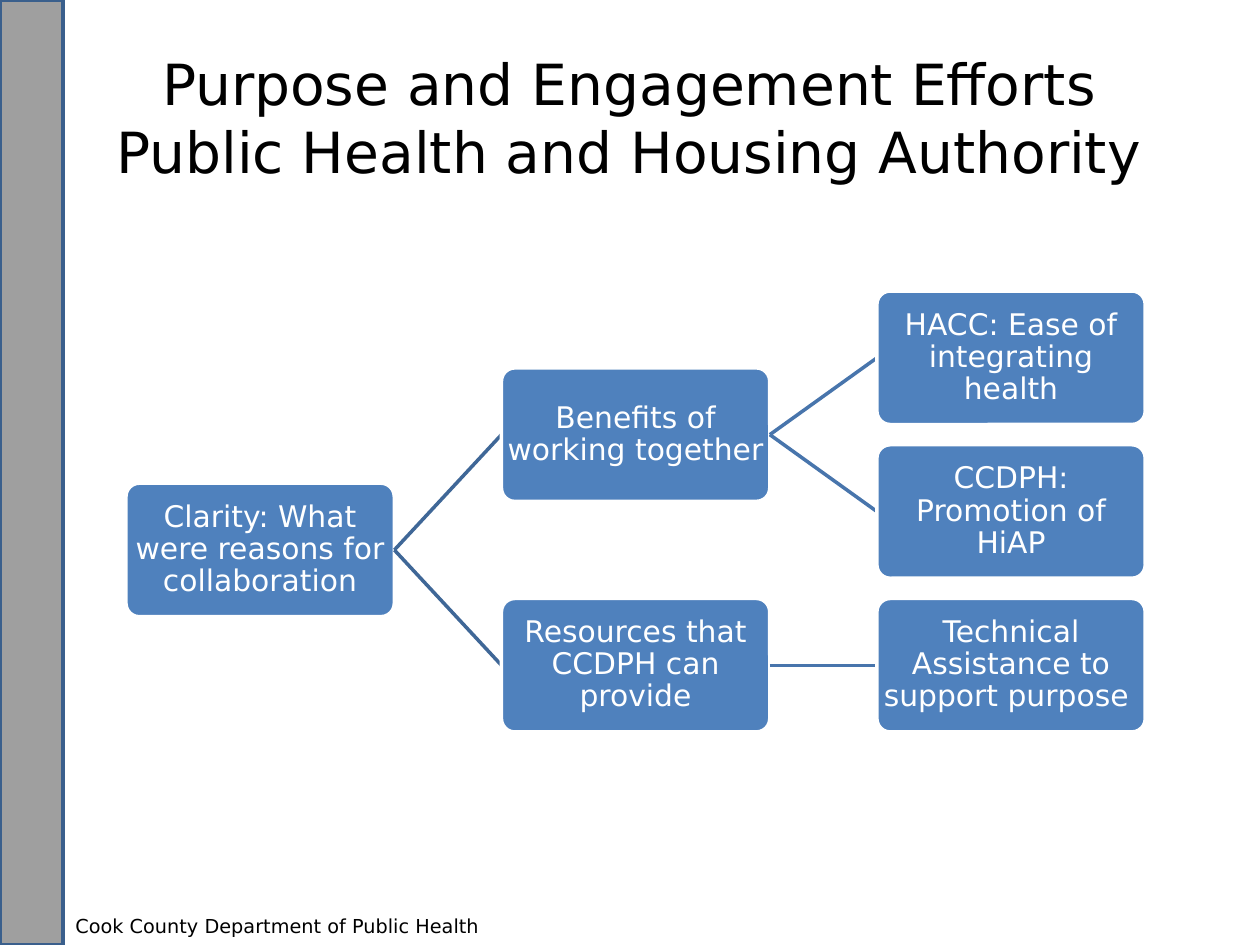
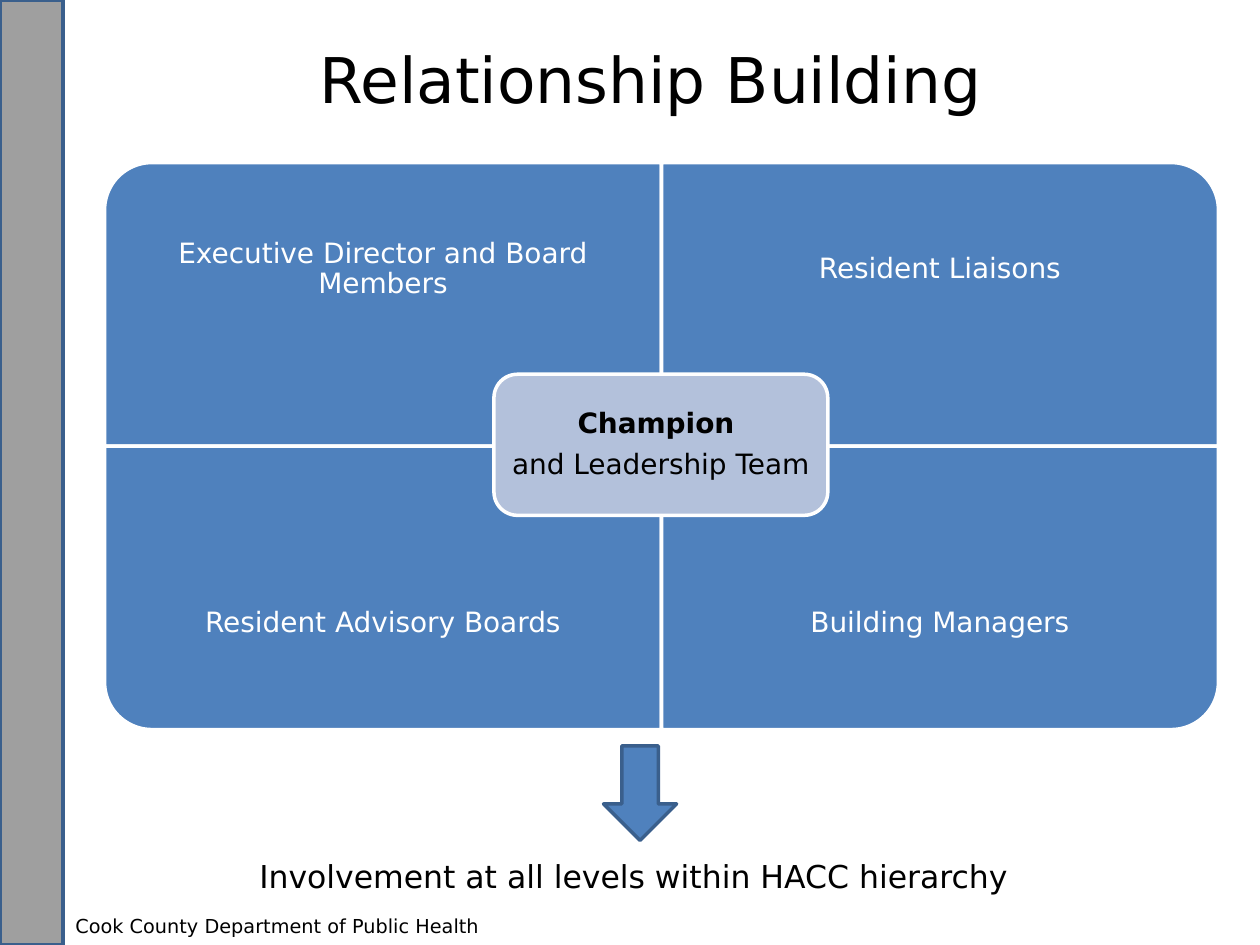
from dataclasses import dataclass

from lxml import etree
from pptx import Presentation
from pptx.dml.color import RGBColor
from pptx.enum.shapes import MSO_CONNECTOR, MSO_SHAPE
from pptx.enum.text import MSO_ANCHOR, PP_ALIGN
from pptx.oxml.ns import qn
from pptx.util import Inches, Pt

RECT, ROUND_RECT = MSO_SHAPE.RECTANGLE, MSO_SHAPE.ROUNDED_RECTANGLE
ROUND_CORNER, DOWN_ARROW = MSO_SHAPE.ROUND_1_RECTANGLE, MSO_SHAPE.DOWN_ARROW
STRAIGHT = MSO_CONNECTOR.STRAIGHT
LEFT, CENTER = PP_ALIGN.LEFT, PP_ALIGN.CENTER
TOP, MIDDLE = MSO_ANCHOR.TOP, MSO_ANCHOR.MIDDLE


@dataclass(frozen=True)
class Theme:
    font: str = "DejaVu Sans"
    black: str = "000000"
    white: str = "FFFFFF"
    blue: str = "4F81BD"
    pale_blue: str = "B3C1DB"
    edge: str = "3A5F8C"
    band: str = "808080"
    band_opacity: int = 75
    links: tuple[str, ...] = ("3F6797", "4875AC")
    line_width: float = 2
    long_title_size: float = 32.4
    title_size: float = 36
    outcome_size: float = 18
    node_size: float = 17
    quadrant_size: float = 16
    footer_size: float = 11
    tight: float = 0.9
    paragraph_gap: float = 6


THEME = Theme()


@dataclass(frozen=True)
class Box:
    """A place on the slide, in inches."""
    left: float
    top: float
    width: float
    height: float

    def emu(self) -> tuple:
        return tuple(Inches(v) for v in (self.left, self.top, self.width, self.height))


@dataclass(frozen=True)
class Topic:
    text: str
    children: tuple["Topic", ...] = ()


@dataclass(frozen=True)
class Quadrant:
    text: str
    column: int
    row: int
    rotation: int


FOOTER = "Cook County Department of Public Health"
REASONS = Topic("Clarity: What were reasons for collaboration", (
    Topic("Benefits of working together", (
        Topic("HACC: Ease of integrating health"),
        Topic("CCDPH: Promotion of HiAP"),
    )),
    Topic("Resources that CCDPH can provide", (
        Topic("Technical Assistance to support purpose "),
    )),
))
QUADRANTS = (
    Quadrant("Executive Director and Board Members", 0, 0, 270),
    Quadrant("Resident Liaisons", 1, 0, 0),
    Quadrant("Resident Advisory Boards", 0, 1, 180),
    Quadrant("Building Managers", 1, 1, 90),
)

NODE_WIDTH, NODE_HEIGHT = 2.13, 1.06
TREE_LEFT, LEVEL_STEP = 1.0, 2.98
FIRST_LEAF_MIDDLE, LEAF_STEP = 2.84, 1.22
GRID_LEFT, GRID_TOP = 0.83, 1.29
QUADRANT_WIDTH, QUADRANT_HEIGHT, LABEL_HEIGHT = 4.42, 2.25, 1.69


def write(shape, text: str, *, size: float, color: str = THEME.black,
          align=CENTER, anchor=MIDDLE, inset: float | None = None,
          spacing: float | None = None, bold_first: bool = False) -> None:
    """Fill a shape with text, one paragraph for each line."""
    frame = shape.text_frame
    frame.word_wrap = True
    frame.vertical_anchor = anchor
    if inset is not None:
        frame.margin_left = frame.margin_right = Inches(inset)
        frame.margin_top = frame.margin_bottom = Inches(inset)
    frame.text = text
    for index, paragraph in enumerate(frame.paragraphs):
        paragraph.alignment = align
        if spacing:
            paragraph.line_spacing = spacing
            paragraph.space_after = Pt(THEME.paragraph_gap)
        for run in paragraph.runs:
            run.font.name = THEME.font
            run.font.size = Pt(size)
            run.font.bold = bold_first and index == 0
            run.font.color.rgb = RGBColor.from_string(color)


def add_text(slide, box: Box, text: str, **text_format) -> None:
    write(slide.shapes.add_textbox(*box.emu()), text, **text_format)


def add_block(slide, kind, box: Box, fill: str = THEME.blue, line: str = THEME.white):
    block = slide.shapes.add_shape(kind, *box.emu())
    block.shadow.inherit = False
    block.fill.solid()
    block.fill.fore_color.rgb = RGBColor.from_string(fill)
    block.line.color.rgb = RGBColor.from_string(line)
    block.line.width = Pt(THEME.line_width)
    return block


def add_link(slide, x1: float, y1: float, x2: float, y2: float, color: str) -> None:
    link = slide.shapes.add_connector(STRAIGHT, *(Inches(v) for v in (x1, y1, x2, y2)))
    link.line.color.rgb = RGBColor.from_string(color)
    link.line.width = Pt(THEME.line_width)
    etree.SubElement(link._element.spPr, qn("a:effectLst"))


def add_slide(deck, title: str, title_box: Box, title_size: float):
    """Start a slide with the side band, footer and title."""
    slide = deck.slides.add_slide(deck.slide_layouts[6])
    band = add_block(slide, RECT, Box(0, 0, 0.5, 7.5), THEME.band, THEME.edge)
    band_color = band._element.spPr.find(qn("a:solidFill"))[0]
    etree.SubElement(band_color, qn("a:alpha"), val=str(THEME.band_opacity * 1000))
    add_text(slide, Box(0.5, 7.21, 5.17, 0.29), FOOTER,
             size=THEME.footer_size, align=LEFT, anchor=TOP)
    add_text(slide, title_box, title, size=title_size)
    return slide


def leaf_count(topic: Topic) -> int:
    return sum(map(leaf_count, topic.children)) or 1


def topic_middle(topic: Topic, first_leaf: int) -> float:
    """Centre a topic between its first and last child."""
    if not topic.children:
        return FIRST_LEAF_MIDDLE + LEAF_STEP * first_leaf
    last = topic.children[-1]
    last_leaf = first_leaf + leaf_count(topic) - leaf_count(last)
    return (topic_middle(topic.children[0], first_leaf) + topic_middle(last, last_leaf)) / 2


def draw_topic(slide, topic: Topic, level: int = 0, first_leaf: int = 0) -> None:
    left = TREE_LEFT + LEVEL_STEP * level
    middle = topic_middle(topic, first_leaf)
    node = add_block(slide, ROUND_RECT,
                     Box(left, middle - NODE_HEIGHT / 2, NODE_WIDTH, NODE_HEIGHT))
    node.adjustments[0] = 0.1
    write(node, topic.text, size=THEME.node_size, color=THEME.white,
          inset=0.01, spacing=THEME.tight)
    for child in topic.children:
        add_link(slide, left + NODE_WIDTH, middle, left + LEVEL_STEP,
                 topic_middle(child, first_leaf), THEME.links[level])
        draw_topic(slide, child, level + 1, first_leaf)
        first_leaf += leaf_count(child)


def draw_quadrant(slide, quadrant: Quadrant) -> None:
    left = GRID_LEFT + QUADRANT_WIDTH * quadrant.column
    top = GRID_TOP + QUADRANT_HEIGHT * quadrant.row
    width, height = QUADRANT_WIDTH, QUADRANT_HEIGHT
    if quadrant.rotation % 180:
        width, height = height, width
    panel = add_block(slide, ROUND_CORNER, Box(
        left + (QUADRANT_WIDTH - width) / 2, top + (QUADRANT_HEIGHT - height) / 2,
        width, height))
    panel.rotation = quadrant.rotation
    label_top = top + (QUADRANT_HEIGHT - LABEL_HEIGHT) * quadrant.row
    add_text(slide, Box(left, label_top, QUADRANT_WIDTH, LABEL_HEIGHT), quadrant.text,
             size=THEME.quadrant_size, color=THEME.white, inset=0.12, spacing=THEME.tight)


def build_purpose(deck) -> None:
    slide = add_slide(
        deck, "Purpose and Engagement Efforts\vPublic Health and Housing Authority",
        Box(0.58, 0.3, 8.83, 1.25), THEME.long_title_size)
    draw_topic(slide, REASONS)


def build_relationships(deck) -> None:
    slide = add_slide(deck, "Relationship Building",
                      Box(0.75, 0, 8.83, 1.25), THEME.title_size)
    for quadrant in QUADRANTS:
        draw_quadrant(slide, quadrant)
    champion = add_block(slide, ROUND_RECT, Box(3.92, 2.97, 2.65, 1.12), THEME.pale_blue)
    write(champion, "Champion \nand Leadership Team", size=THEME.quadrant_size,
          inset=0.07, spacing=THEME.tight, bold_first=True)
    add_block(slide, DOWN_ARROW, Box(4.79, 5.92, 0.58, 0.75), line=THEME.edge)
    add_text(slide, Box(1.96, 6.75, 6.25, 0.4),
             "Involvement at all levels within HACC hierarchy",
             size=THEME.outcome_size, align=LEFT, anchor=TOP)


def main() -> None:
    deck = Presentation()
    deck.slide_width, deck.slide_height = Inches(10), Inches(7.5)
    build_purpose(deck)
    build_relationships(deck)
    deck.save("out.pptx")


if __name__ == "__main__":
    main()
